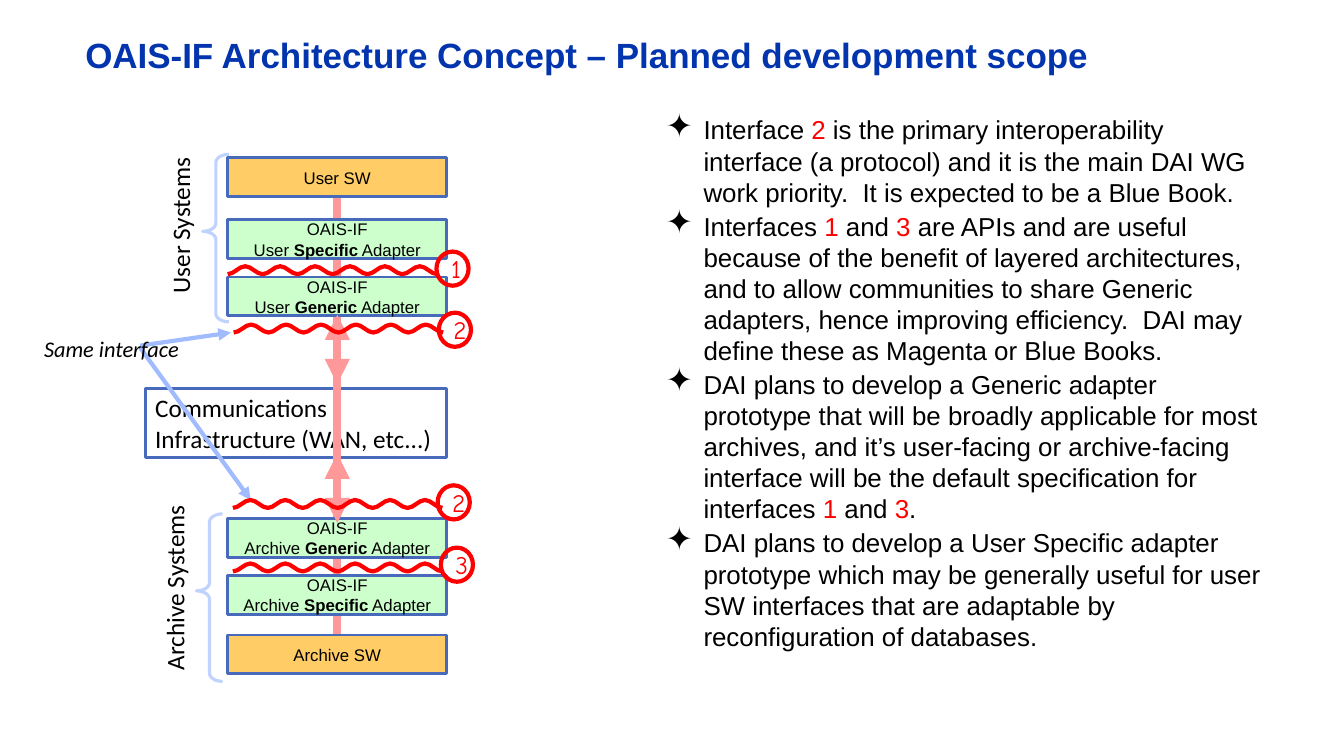
from lxml import etree
from pptx import Presentation
from pptx.dml.color import RGBColor
from pptx.enum.shapes import MSO_CONNECTOR, MSO_SHAPE
from pptx.enum.text import MSO_ANCHOR, PP_ALIGN
from pptx.oxml.ns import qn
from pptx.util import Cm, Pt

RECT, OVAL, BRACE = MSO_SHAPE.RECTANGLE, MSO_SHAPE.OVAL, MSO_SHAPE.LEFT_BRACE
STRAIGHT = MSO_CONNECTOR.STRAIGHT
LEFT, CENTER = PP_ALIGN.LEFT, PP_ALIGN.CENTER
TOP, MIDDLE = MSO_ANCHOR.TOP, MSO_ANCHOR.MIDDLE


class Theme:
    black, white = RGBColor.from_string("000000"), RGBColor.from_string("FFFFFF")
    title, red = RGBColor.from_string("0234AD"), RGBColor.from_string("FF0000")
    edge, brace = RGBColor.from_string("486ABB"), RGBColor.from_string("C0D2FE")
    pointer, flow = RGBColor.from_string("A0BCFE"), RGBColor.from_string("FF9999")
    orange, green = RGBColor.from_string("FFCC66"), RGBColor.from_string("CCFFCC")
    sans, label, digit = "Arial", "Calibri", "Comic Neue"
    head, body, large, note, small = Pt(25), Pt(18.5), Pt(18), Pt(16), Pt(12)


def write(shape, lines, font, size, color=Theme.black, align=LEFT,
          anchor=TOP, mark=None, bold=False, italic=False):
    """Fill a shape with lines; parts between asterisks turn to mark, or bold."""
    frame = shape.text_frame
    frame.word_wrap, frame.vertical_anchor = True, anchor
    for n, line in enumerate(lines):
        para = frame.paragraphs[0] if n == 0 else frame.add_paragraph()
        para.alignment = align
        for i, part in enumerate(line.split("*")):
            run = para.add_run()
            run.text = part
            face = run.font
            face.name, face.size, face.italic = font, size, italic
            face.color.rgb = mark if mark and i % 2 else color
            face.bold = bold or (i % 2 == 1 and mark is None)
    return frame


def link(x1, y1, x2, y2, color, width, ends=()):
    """Draw a straight line with triangles at the named ends."""
    line = shapes.add_connector(STRAIGHT, Cm(x1), Cm(y1), Cm(x2), Cm(y2))
    line.line.color.rgb, line.line.width = color, Pt(width)
    for end in ends:
        etree.SubElement(line.get_or_add_ln(), qn("a:" + end), type="triangle")
    etree.SubElement(line._element.spPr, qn("a:effectLst"))
    return line


deck = Presentation()
deck.slide_width, deck.slide_height = Cm(33.87), Cm(19.05)
shapes = deck.slides.add_slide(deck.slide_layouts[6]).shapes

# Communications box
comms = shapes.add_shape(RECT, Cm(3.66), Cm(9.8), Cm(7.59), Cm(1.72))
comms.shadow.inherit = False
comms.fill.solid()
comms.fill.fore_color.rgb = Theme.white
comms.line.color.rgb, comms.line.width = Theme.edge, Pt(2)
write(comms, ["Communications", "Infrastructure (WAN, etc...)"],
      Theme.label, Theme.large, anchor=MIDDLE)

# Braces with upright labels
groups = [("Archive Systems", 4.95, 12.95, 1.96, 14.3, 4.88),
          ("User Systems", 5.11, 3.89, 2.54, 5.17, 4.01)]
for name, x, y, left, top, wide in groups:
    brace = shapes.add_shape(BRACE, Cm(x), Cm(y), Cm(0.66), Cm(4.22))
    brace.shadow.inherit = False
    brace.adjustments[0], brace.adjustments[1] = 0.31, 0.46
    brace.fill.background()
    brace.line.color.rgb, brace.line.width = Theme.brace, Pt(2.25)
    label = shapes.add_textbox(Cm(left), Cm(top), Cm(wide), Cm(1.02))
    label.rotation = 270
    write(label, [name], Theme.label, Theme.large, align=CENTER).word_wrap = False

# Pointers to the shared interface
link(3.53, 8.76, 6.32, 12.6, Theme.pointer, 3, ["tailEnd"])
link(3.53, 8.71, 5.82, 8.38, Theme.pointer, 3, ["tailEnd"])
same = shapes.add_textbox(Cm(0.86), Cm(8.33), Cm(3.96), Cm(0.94))
write(same, ["Same interface"], Theme.label, Theme.note, italic=True)

# Software and adapter stack
spine = link(8.5, 5, 8.5, 16, Theme.flow, 6)
stack = [(3.98, Theme.orange, ["User SW"]),
         (5.54, Theme.green, ["OAIS-IF", "User *Specific* Adapter"]),
         (6.98, Theme.green, ["OAIS-IF", "User *Generic* Adapter"]),
         (13.06, Theme.green, ["OAIS-IF", "Archive *Generic* Adapter"]),
         (14.5, Theme.green, ["OAIS-IF", "Archive *Specific* Adapter"]),
         (16, Theme.orange, ["Archive SW"])]
boxes = []
for y, fill, lines in stack:
    box = shapes.add_shape(RECT, Cm(5.74), Cm(y), Cm(5.52), Cm(0.98))
    box.shadow.inherit = False
    box.fill.solid()
    box.fill.fore_color.rgb = fill
    box.line.color.rgb, box.line.width = Theme.edge, Pt(2)
    frame = write(box, lines, Theme.sans, Theme.small, align=CENTER, anchor=MIDDLE)
    frame.margin_top = frame.margin_bottom = 0
    boxes.append(box)
spine.begin_connect(boxes[0], 2)
spine.end_connect(boxes[5], 0)

# Flow through the communications box
link(8.5, 8.69, 8.5, 12.45, Theme.flow, 6)
link(8.5, 7.93, 8.5, 9.68, Theme.flow, 6, ["headEnd", "tailEnd"])
link(8.5, 11.43, 8.5, 13.18, Theme.flow, 6, ["headEnd", "tailEnd"])

# Interface waves with numbered rings
HALF, HIGH, BENDS = 0.44, 0.2, 12
waves = [("1", 5.74, 6.71, 11, 6.34), ("2", 5.89, 8.18, 11.06, 7.88),
         ("3", 5.87, 14.2, 11.11, 13.8), ("2", 5.87, 12.6, 11.03, 12.23)]
for digit, x, y, left, top in waves:
    dots = [(Cm(x + HALF * i), Cm(y + HIGH * (1 - i % 2))) for i in range(BENDS + 1)]
    outline = shapes.build_freeform(*dots[0])
    outline.add_line_segments(dots[1:], close=False)
    wave = outline.convert_to_shape()
    # Bend each straight piece into a level-ended curve
    for i, piece in enumerate(list(wave._element.iter(qn("a:lnTo")))):
        piece.tag = qn("a:cubicBezTo")
        stop = piece[0]
        start_y, end_y = (Cm(HIGH * (1 - k % 2)) for k in (i, i + 1))
        for n, (share, level) in enumerate([(0.36, start_y), (0.64, end_y)]):
            spot = etree.Element(qn("a:pt"), x=str(Cm(HALF * (i + share))), y=str(level))
            piece.insert(n, spot)
        stop.set("y", str(end_y))
    ring = shapes.add_shape(OVAL, Cm(left), Cm(top), Cm(0.81), Cm(0.86))
    for item in (wave, ring):
        item.shadow.inherit = False
        item.fill.background()
        item.line.color.rgb, item.line.width = Theme.red, Pt(3)
    frame = write(ring, [digit], Theme.digit, Theme.large, Theme.red, CENTER)
    frame.margin_left = frame.margin_right = Cm(0.25)
    frame.margin_top, frame.margin_bottom = 0, Cm(0.76)

# Title
title = shapes.add_textbox(Cm(1.9), Cm(0.84), Cm(30.48), Cm(1.57))
frame = write(title, ["OAIS-IF Architecture Concept – Planned development scope"],
              Theme.sans, Theme.head, Theme.title, bold=True)
frame.paragraphs[0].line_spacing = 0.9

# Bullet text
points = [
    "Interface *2* is the primary interoperability interface (a protocol) and it is "
    "the main DAI WG work priority.  It is expected to be a Blue Book.",
    "Interfaces *1* and *3* are APIs and are useful because of the benefit of layered "
    "architectures, and to allow communities to share Generic adapters, hence "
    "improving efficiency.  DAI may define these as Magenta or Blue Books.",
    "DAI plans to develop a Generic adapter prototype that will be broadly applicable "
    "for most archives, and it’s user-facing or archive-facing interface will be the "
    "default specification for interfaces *1* and *3*.",
    "DAI plans to develop a User Specific adapter prototype which may be generally "
    "useful for user SW interfaces that are adaptable by reconfiguration of databases.",
]
body = shapes.add_textbox(Cm(16.53), Cm(2.75), Cm(15.67), Cm(14.27))
for para in write(body, points, Theme.sans, Theme.body, mark=Theme.red).paragraphs:
    para.line_spacing, para.space_after = 1.0, Pt(2)
    props = para._p.get_or_add_pPr()
    props.set("marL", str(Cm(0.95)))
    props.set("indent", str(-Cm(0.95)))
    etree.SubElement(props, qn("a:buSzPct"), val="125000")
    etree.SubElement(props, qn("a:buChar"), char="✦")

deck.save("out.pptx")
